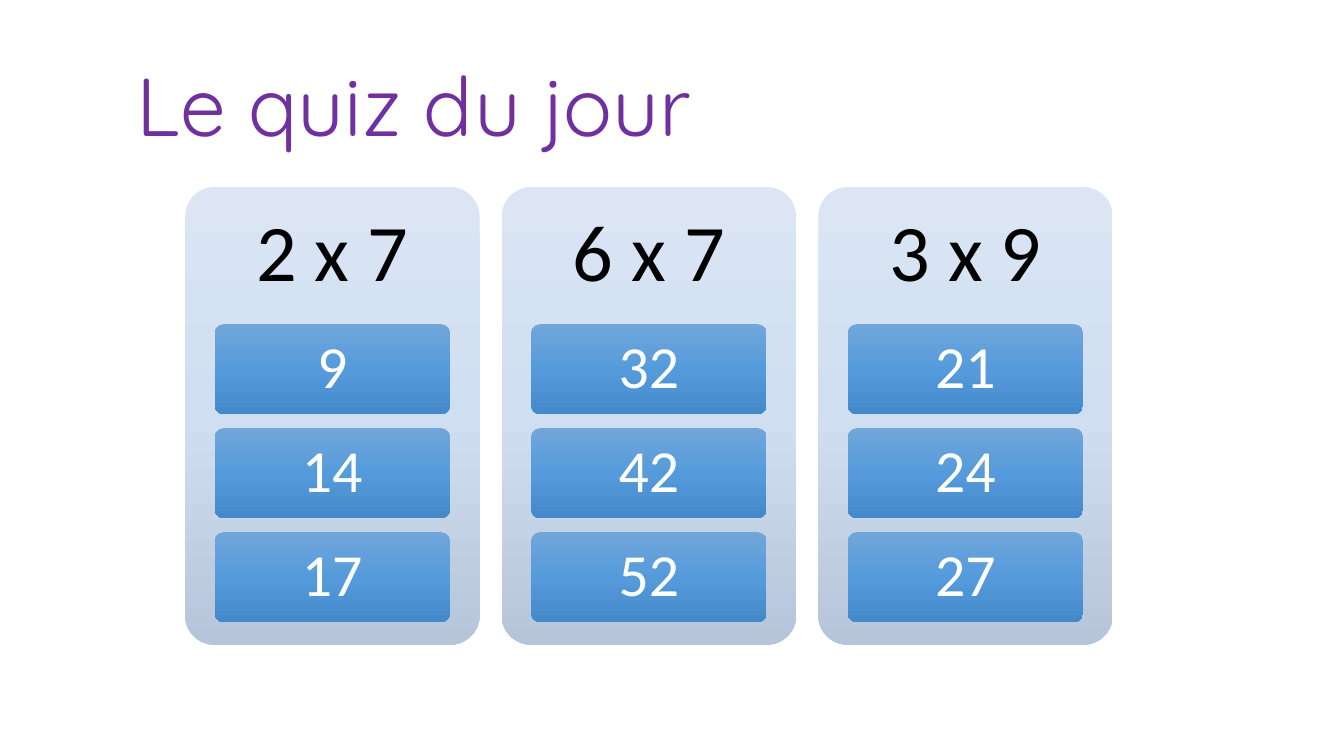
from copy import deepcopy

from pptx import Presentation
from pptx import util as u
from pptx.dml.color import RGBColor
from pptx.enum import shapes, text
from pptx.oxml.ns import qn

PURPLE = RGBColor(0x70, 0x30, 0xA0)
BLACK = RGBColor(0x00, 0x00, 0x00)
WHITE = RGBColor(0xFF, 0xFF, 0xFF)
PANEL_SHADES = (RGBColor(0xDB, 0xE5, 0xF3), RGBColor(0xD0, 0xDE, 0xF1), RGBColor(0xB6, 0xC5, 0xD9))
ANSWER_SHADES = (RGBColor(0x71, 0xA6, 0xDB), RGBColor(0x55, 0x9B, 0xDB), RGBColor(0x44, 0x8A, 0xCA))

QUIZ = {
    "2 x 7": ("9", "14", "17"),
    "6 x 7": ("32", "42", "52"),
    "3 x 9": ("21", "24", "27"),
}

PANEL_LEFT, PANEL_TOP, PANEL_WIDTH, PANEL_HEIGHT = 99.2, 100.2, 157.7, 245.2
PANEL_PITCH = 169.6
QUESTION_HEIGHT = 73.5
ANSWER_WIDTH, ANSWER_HEIGHT, ANSWER_PITCH = 126.2, 48.2, 55.7


class QuizSlide:
    TITLE = {"name": "Quicksand", "size": u.Pt(44), "color": PURPLE}
    QUESTION = {"name": "Calibri", "size": u.Pt(43), "color": BLACK}
    ANSWER = {"name": "Calibri", "size": u.Pt(32), "color": WHITE}

    def __init__(self, slide):
        self.slide = slide

    def set_text(self, frame, wording, style, align, anchor):
        frame.word_wrap = True
        frame.vertical_anchor = anchor
        line = frame.paragraphs[0]
        line.alignment = align
        line.line_spacing = 0.9
        run = line.add_run()
        run.text = wording
        for attribute, value in style.items():
            if attribute == "color":
                run.font.color.rgb = value
            else:
                setattr(run.font, attribute, value)

    def label(self, wording, box, style, align=text.PP_ALIGN.CENTER, anchor=text.MSO_ANCHOR.MIDDLE):
        frame = self.slide.shapes.add_textbox(*map(u.Pt, box)).text_frame
        self.set_text(frame, wording, style, align, anchor)

    def card(self, box, shades):
        """Add a rounded rectangle shaded from top to bottom in three colours."""
        card = self.slide.shapes.add_shape(shapes.MSO_SHAPE.ROUNDED_RECTANGLE, *map(u.Pt, box))
        card.adjustments[0] = 0.1
        card.shadow.inherit = False
        card.line.fill.background()
        card.fill.gradient()
        card.fill.gradient_angle = 270
        stop_list = card.element.spPr.find(".//" + qn("a:gsLst"))
        stop_list.append(deepcopy(stop_list[0]))
        for stop, position, shade in zip(card.fill.gradient_stops, (0, 0.5, 1), shades):
            stop.position = position
            stop.color.rgb = shade
        return card

    def answer(self, wording, box):
        frame = self.card(box, ANSWER_SHADES).text_frame
        self.set_text(frame, wording, self.ANSWER, text.PP_ALIGN.CENTER, text.MSO_ANCHOR.MIDDLE)

    def panel(self, left, question, answers):
        self.card((left, PANEL_TOP, PANEL_WIDTH, PANEL_HEIGHT), PANEL_SHADES)
        self.label(question, (left, PANEL_TOP, PANEL_WIDTH, QUESTION_HEIGHT), self.QUESTION)
        answer_left = left + (PANEL_WIDTH - ANSWER_WIDTH) / 2
        for row, answer in enumerate(answers):
            top = PANEL_TOP + QUESTION_HEIGHT + row * ANSWER_PITCH
            self.answer(answer, (answer_left, top, ANSWER_WIDTH, ANSWER_HEIGHT))


def main():
    deck = Presentation()
    deck.slide_width, deck.slide_height = u.Pt(720), u.Pt(405)
    quiz = QuizSlide(deck.slides.add_slide(deck.slide_layouts[6]))
    quiz.label("Le quiz du jour", (66.2, 31.7, 439.2, 74.9), quiz.TITLE,
               text.PP_ALIGN.LEFT, text.MSO_ANCHOR.TOP)
    for column, (question, answers) in enumerate(QUIZ.items()):
        quiz.panel(PANEL_LEFT + column * PANEL_PITCH, question, answers)
    deck.save("out.pptx")


if __name__ == "__main__":
    main()
